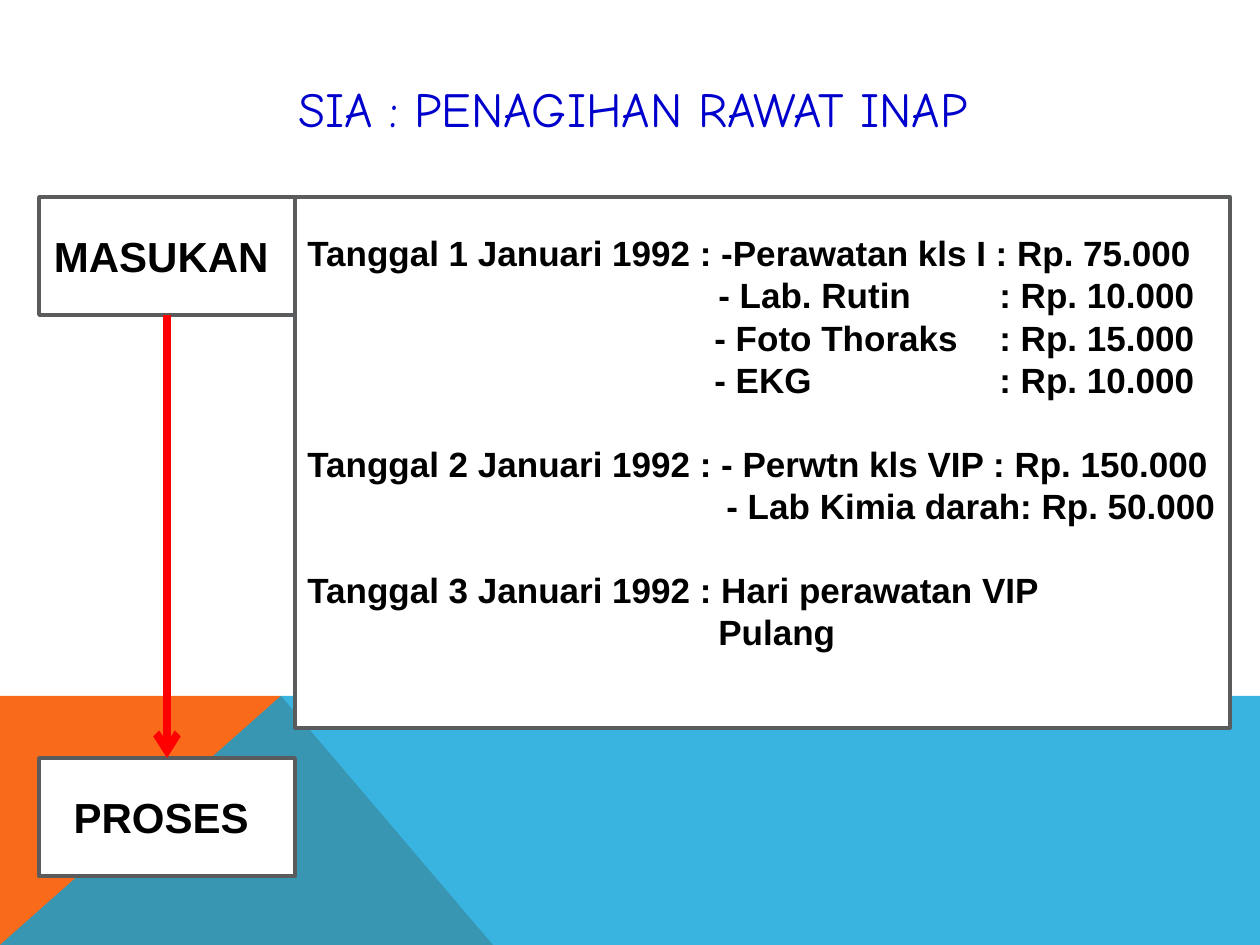
from dataclasses import dataclass
from typing import Optional

from lxml.etree import SubElement
from pptx import Presentation
from pptx.dml.color import RGBColor
from pptx.enum.shapes import MSO_CONNECTOR as Conn, MSO_SHAPE as Shp
from pptx.enum.text import MSO_ANCHOR as Anchor, PP_ALIGN as Align
from pptx.oxml.ns import qn
from pptx.util import Pt

PX = 914400 / 126
FONT = "Arial"


@dataclass
class Box:
    x: int
    y: int
    w: int
    h: int
    label: str = ""


@dataclass
class Line:
    text: str
    tabs: tuple = ()
    gap: int = 0


@dataclass
class Band:
    points: list
    color: str
    alpha: Optional[int] = None


BANDS = [
    Band([(0, 945), (0, 696), (281, 696), (493, 945)], "F96A1B"),
    Band([(0, 945), (281, 696), (1260, 696), (1260, 945)], "08A1D9", 80),
]
INPUT = Box(39, 197, 256, 118, "MASUKAN ")
PROCESS = Box(39, 758, 256, 118, "PROSES ")
DETAIL = Box(295, 197, 935, 531)
LINES = [
    Line("Tanggal 1 Januari 1992 : -Perawatan kls I : Rp. 75.000"),
    Line("\t- Lab. Rutin\t: Rp. 10.000", (411, 692)),
    Line("\t- Foto Thoraks\t: Rp. 15.000", (407, 692)),
    Line("\t- EKG\t: Rp. 10.000", (407, 692)),
    Line("Tanggal 2 Januari 1992 : - Perwtn kls VIP : Rp. 150.000", gap=24),
    Line("\t- Lab Kimia darah: Rp. 50.000", (419,)),
    Line("Tanggal 3 Januari 1992 : Hari perawatan VIP", gap=24),
    Line("\tPulang", (411,)),
]


def px(n: float) -> int:
    return round(n * PX)


def rgb(color: str) -> RGBColor:
    return RGBColor.from_string(color)


def add_run(p, text: str, size: int, color="000000", font=FONT, bold=True) -> None:
    r = p.add_run()
    r.text = text
    r.font.size = Pt(size)
    r.font.name = font
    r.font.bold = bold
    r.font.color.rgb = rgb(color)


def add_band(s, band: Band) -> None:
    fb = s.shapes.build_freeform(*band.points[0], scale=PX)
    fb.add_line_segments(band.points[1:], close=True)
    sp = fb.convert_to_shape()
    sp.shadow.inherit = False
    sp.fill.solid()
    sp.fill.fore_color.rgb = rgb(band.color)
    sp.line.fill.background()
    if band.alpha:
        clr = sp.fill._xPr.find(qn("a:solidFill"))[0]
        SubElement(clr, qn("a:alpha")).set("val", str(band.alpha * 1000))


def add_box(s, b: Box):
    sp = s.shapes.add_shape(Shp.RECTANGLE, px(b.x), px(b.y), px(b.w), px(b.h))
    sp.shadow.inherit = False
    sp.fill.solid()
    sp.fill.fore_color.rgb = rgb("FFFFFF")
    sp.line.color.rgb = rgb("5A5B5D")
    sp.line.width = Pt(2)
    tf = sp.text_frame
    tf.word_wrap = True
    tf.vertical_anchor = Anchor.MIDDLE
    if b.label:
        p = tf.paragraphs[0]
        p.alignment = Align.CENTER
        add_run(p, b.label, 24)
    return sp


def add_lines(tf, lines: list) -> None:
    tf.vertical_anchor = Anchor.TOP
    tf.margin_top = px(35)
    tf.margin_right = 0
    for i, line in enumerate(lines):
        p = tf.add_paragraph() if i else tf.paragraphs[0]
        p.alignment = Align.LEFT
        p.line_spacing = Pt(24)
        p.space_before = Pt(line.gap)
        if line.tabs:
            tabs = SubElement(p._p.get_or_add_pPr(), qn("a:tabLst"))
            for pos in line.tabs:
                tab = SubElement(tabs, qn("a:tab"))
                tab.set("pos", str(px(pos)))
                tab.set("algn", "l")
        add_run(p, line.text, 20)


def add_arrow(s, start, end) -> None:
    c = s.shapes.add_connector(Conn.STRAIGHT, 0, 0, 0, 0)
    c.begin_connect(start, 2)
    c.end_connect(end, 0)
    c.line.color.rgb = rgb("FF0000")
    c.line.width = Pt(4.5)
    SubElement(c.line._get_or_add_ln(), qn("a:tailEnd")).set("type", "arrow")
    SubElement(c._element.spPr, qn("a:effectLst"))


def set_title(s, b: Box) -> None:
    t = s.shapes.title
    t.left, t.top, t.width, t.height = px(b.x), px(b.y), px(b.w), px(b.h)
    tf = t.text_frame
    tf.vertical_anchor = Anchor.MIDDLE
    p = tf.paragraphs[0]
    p.alignment = Align.CENTER
    add_run(p, b.label, 28, "0000CC", "Comic Neue", False)


def main() -> None:
    prs = Presentation()
    prs.slide_width, prs.slide_height = px(1260), px(945)
    s = prs.slides.add_slide(prs.slide_layouts[5])
    for band in BANDS:
        add_band(s, band)
    set_title(s, Box(69, 49, 1128, 118, "SIA : PENAGIHAN RAWAT INAP"))
    start = add_box(s, INPUT)
    add_lines(add_box(s, DETAIL).text_frame, LINES)
    end = add_box(s, PROCESS)
    add_arrow(s, start, end)
    prs.save("out.pptx")


if __name__ == "__main__":
    main()
